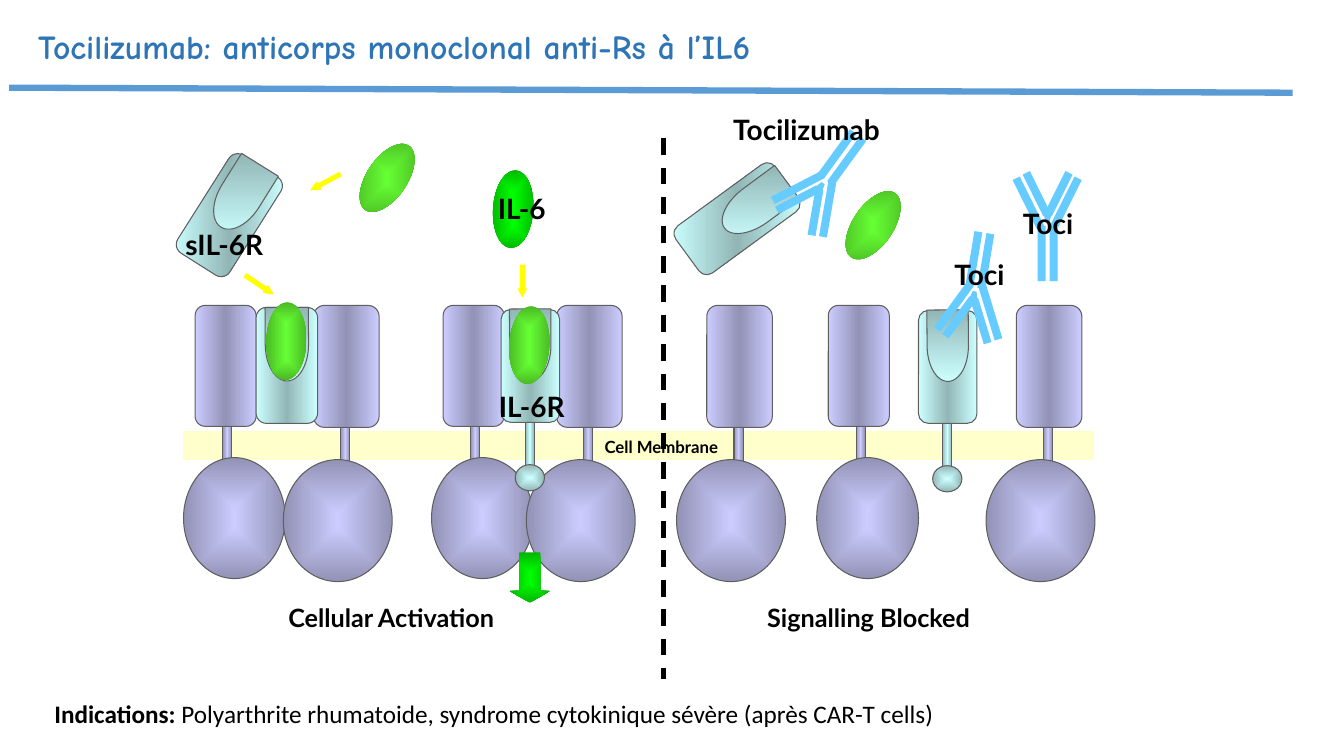
import math
from dataclasses import dataclass

import lxml.etree
import pptx
import pptx.dml.fill
import pptx.enum.dml
import pptx.enum.shapes
import pptx.enum.text
import pptx.oxml.ns
import pptx.util
from pptx.dml.color import RGBColor

COLUMNS, ROWS = 133.3, 75
CELL = 0.1  # inches per column and per row

COLOURS = {
    "white": "FFFFFF", "black": "000000", "title": "2E75B6", "rule": "5B9BD5",
    "membrane": "FFFFCC", "edge": "5F5F5F", "yellow": "FFFF00", "antibody": "66CCFF",
    "lilac": "CCCCFF", "dark lilac": "9292B6", "aqua": "CCFFFF", "dark aqua": "92B6B6",
    "lime": "66FF33", "dark lime": "49B624", "green": "00FF00", "dark green": "00B600",
}
KIND = pptx.enum.shapes.MSO_SHAPE
ALIGN = pptx.enum.text.PP_ALIGN


@dataclass(frozen=True)
class Paint:
    """One colour is a solid fill; more colours are evenly spaced gradient stops."""
    stops: tuple[str, ...]
    spread: str = "across"
    edge: str | None = None


@dataclass(frozen=True)
class Part:
    kind: KIND
    col: float
    row: float
    cols: float
    rows: float
    paint: Paint
    turn: float = 0
    adjust: tuple[float, ...] = ()


@dataclass(frozen=True)
class Label:
    words: str
    col: float
    row: float
    cols: float
    rows: float
    size: float = 20


@dataclass(frozen=True)
class Gp130Form:
    """Sizes of one gp130 chain; offsets count from the left of its body."""
    head: tuple[float, float, float, float]
    stem: tuple[float, float, float, float]
    body: tuple[float, float, float, float]


def tube(light: str, edge: str = "edge") -> Paint:
    return Paint((light, f"dark {light}", light), edge=edge)


def rod(light: str) -> Paint:
    return Paint((f"dark {light}", light, f"dark {light}"), edge="edge")


def ball(light: str, edge: str | None = None, spread: str = "shape") -> Paint:
    return Paint((light, f"dark {light}"), spread, edge)


CUP = Paint(("dark aqua", "aqua"), "down", "edge")
ARROW = Paint(("yellow",), edge="yellow")
ANTIBODY = Paint(("antibody",))
ROUND = (0.167,)

NARROW = Gp130Form((1.15, 30.3, 6.05, 12), (3.9, 41.4, 0.9, 5.5), (0, 45.4, 10.1, 12))
WIDE = Gp130Form((3, 30.3, 6.5, 12.1), (5.7, 41.6, 0.9, 5.6), (0, 45.6, 10.8, 12.1))

# Centre offset from the joint, length and turn of each antibody bar
ANTIBODY_BARS = (
    (-0.6, 3.55, 5.5, 0), (0.6, 3.55, 5.5, 0),
    (1.8, -1.45, 5.5, 26.6), (-1.9, -1.45, 5.5, 153.7),
    (-1.1, -2.4, 4.6, 153.7), (1.1, -2.4, 4.6, 206.6),
)
ANTIBODY_JOINT = ((-0.4, -0.4), (-0.2, 0.4), (0.2, 0.4), (0.4, -0.4))


def cells(count: float) -> int:
    return pptx.util.Inches(count * CELL)


def colour(name: str) -> RGBColor:
    return RGBColor.from_string(COLOURS[name])


def add_gradient(shape, paint: Paint) -> None:
    """Fill with a gradient that keeps its direction when the shape turns."""
    tag = pptx.oxml.ns.qn
    shape.fill.gradient()
    gradient = shape._element.spPr.find(tag("a:gradFill"))
    for child in list(gradient):
        gradient.remove(child)
    gradient.set("rotWithShape", "0")
    stops = lxml.etree.SubElement(gradient, tag("a:gsLst"))
    for index, name in enumerate(paint.stops):
        position = round(100000 * index / (len(paint.stops) - 1))
        stop = lxml.etree.SubElement(stops, tag("a:gs"), pos=str(position))
        lxml.etree.SubElement(stop, tag("a:srgbClr"), val=COLOURS[name])
    if paint.spread in ("across", "down"):
        angle = "0" if paint.spread == "across" else "5400000"
        lxml.etree.SubElement(gradient, tag("a:lin"), ang=angle, scaled="1")
    else:
        centre = lxml.etree.SubElement(gradient, tag("a:path"), path=paint.spread)
        lxml.etree.SubElement(centre, tag("a:fillToRect"),
                              l="50000", t="50000", r="50000", b="50000")


def apply_paint(shape, paint: Paint) -> None:
    shape.shadow.inherit = False
    if len(paint.stops) == 1:
        shape.fill.solid()
        shape.fill.fore_color.rgb = colour(paint.stops[0])
    else:
        add_gradient(shape, paint)
    if paint.edge:
        shape.line.color.rgb = colour(paint.edge)
        shape.line.width = pptx.util.Pt(0.75)
    else:
        shape.line.fill.background()


def draw(slide, part: Part):
    shape = slide.shapes.add_shape(
        part.kind, cells(part.col), cells(part.row), cells(part.cols), cells(part.rows))
    shape.rotation = part.turn
    for index, value in enumerate(part.adjust):
        shape.adjustments[index] = value
    apply_paint(shape, part.paint)
    return shape


def draw_line(slide, start: tuple, end: tuple, name: str, width: float, dashed=False) -> None:
    line = slide.shapes.add_connector(
        pptx.enum.shapes.MSO_CONNECTOR.STRAIGHT, *map(cells, start + end))
    line.line.color.rgb = colour(name)
    line.line.width = pptx.util.Pt(width)
    if dashed:
        line.line.dash_style = pptx.enum.dml.MSO_LINE.DASH
    lxml.etree.SubElement(line._element.spPr, pptx.oxml.ns.qn("a:effectLst"))


def add_run(paragraph, words: str, size: float, font: str, name="black", bold=True) -> None:
    run = paragraph.add_run()
    run.text = words
    run.font.size = pptx.util.Pt(size)
    run.font.name = font
    run.font.bold = bold
    run.font.color.rgb = colour(name)


def add_text_area(slide, col: float, row: float, cols: float, rows: float):
    area = slide.shapes.add_textbox(cells(col), cells(row), cells(cols), cells(rows))
    area.text_frame.word_wrap = True
    area.text_frame.auto_size = pptx.enum.text.MSO_AUTO_SIZE.SHAPE_TO_FIT_TEXT
    return area.text_frame.paragraphs[0]


def draw_label(slide, label: Label) -> None:
    paragraph = add_text_area(slide, label.col, label.row, label.cols, label.rows)
    paragraph.alignment = ALIGN.CENTER
    add_run(paragraph, label.words, label.size, "Lato")


def draw_gp130(slide, col: float, form: Gp130Form) -> None:
    for kind, (offset, *rest), paint, adjust in (
            (KIND.RECTANGLE, form.stem, rod("lilac"), ()),
            (KIND.OVAL, form.body, ball("lilac", "edge"), ()),
            (KIND.ROUNDED_RECTANGLE, form.head, tube("lilac"), ROUND)):
        draw(slide, Part(kind, col + offset, *rest, paint, adjust=adjust))


def draw_membrane_receptor(slide, col: float, row: float) -> None:
    draw(slide, Part(KIND.RECTANGLE, col + 2.4, row + 10.4, 0.9, 5.2, rod("aqua")))
    draw(slide, Part(KIND.OVAL, col + 1.4, row + 15.4, 2.9, 2.6, ball("aqua", "edge")))
    draw(slide, Part(KIND.ROUNDED_RECTANGLE, col, row, 5.8, 11.2, tube("aqua"), adjust=ROUND))
    draw(slide, Part(KIND.FLOWCHART_DELAY, col - 0.65, row + 1.45, 7.1, 4.1, CUP, 89.7))


def draw_antibody(slide, col: float, row: float, turn: float) -> None:
    """Draw a Y around its joint, the whole turned clockwise in degrees."""
    cos, sin = math.cos(math.radians(turn)), math.sin(math.radians(turn))

    def place(x: float, y: float) -> tuple[float, float]:
        return col + x * cos - y * sin, row + x * sin + y * cos

    corners = [tuple(map(cells, place(*corner))) for corner in ANTIBODY_JOINT]
    outline = slide.shapes.build_freeform(*corners[0])
    outline.add_line_segments(corners[1:], close=True)
    apply_paint(outline.convert_to_shape(), ANTIBODY)
    for x, y, length, lean in ANTIBODY_BARS:
        middle, centre = place(x, y)
        draw(slide, Part(KIND.RECTANGLE, middle - 0.4, centre - length / 2, 0.8, length,
                         ANTIBODY, (turn + lean) % 360))


def draw_il6(slide, col: float, row: float, turn: float, light: str = "lime") -> None:
    draw(slide, Part(KIND.OVAL, col, row, 4, 7.7, ball(light), turn))


def draw_title(slide) -> None:
    banner = draw(slide, Part(KIND.RECTANGLE, 2.8, -1, 87.8, 10.3, Paint(("white",), edge="white")))
    banner.text_frame.word_wrap = True
    banner.text_frame.vertical_anchor = pptx.enum.text.MSO_ANCHOR.MIDDLE
    paragraph = banner.text_frame.paragraphs[0]
    paragraph.alignment = ALIGN.LEFT
    paragraph.line_spacing = 1.2
    paragraph.space_after = pptx.util.Pt(6)
    add_run(paragraph, "Tocilizumab: anticorps monoclonal anti-Rs à l’IL6", 24, "Comic Neue", "title")


def draw_activation(slide) -> None:
    draw_il6(slide, 36.4, 13.8, 34.2)
    draw_label(slide, Label("Cellular Activation", 17.7, 59.3, 42.2, 4.7, 18))
    draw(slide, Part(KIND.ROUNDED_RECTANGLE, 19.7, 15.6, 6.1, 11.5, tube("aqua"), 32.3, ROUND))
    draw(slide, Part(KIND.FLOWCHART_DELAY, 20.2, 17.3, 7.3, 4.3, CUP, 122))
    draw_label(slide, Label("sIL-6R", 16.2, 22.1, 12.1, 4.1))
    for col, form in ((18.2, NARROW), (28.1, WIDE), (42.8, NARROW), (52.2, WIDE)):
        draw_gp130(slide, col, form)
    draw(slide, Part(KIND.ROUNDED_RECTANGLE, 25.4, 30.5, 6.1, 11.5, tube("aqua"), adjust=ROUND))
    draw(slide, Part(KIND.FLOWCHART_DELAY, 24.8, 32, 7.3, 4.3, CUP, 89.7))
    draw_il6(slide, 26.4, 30, 1.9)
    draw_il6(slide, 48.9, 16.9, 4, "green")
    draw_label(slide, Label("IL-6", 47.2, 18.5, 9.1, 4.5))
    for col, row, rows, turn, tip in ((51.4, 26.3, 3.1, 180, 0.92), (31.9, 16.4, 3.3, 241.9, 1.08),
                                      (25.3, 26.6, 3.3, 123.8, 1.08)):
        draw(slide, Part(KIND.UP_ARROW, col, row, 0.8, rows, ARROW, turn, (0.5, tip)))
    draw_membrane_receptor(slide, 49.7, 30.7)
    draw_il6(slide, 50.5, 30.4, 3.6)
    draw_label(slide, Label("IL-6R", 48.2, 38.1, 9.1, 4.1))


def draw_blockade(slide) -> None:
    draw_membrane_receptor(slide, 91.1, 30.8)
    for col, form in ((97.8, WIDE), (81, NARROW), (67.1, WIDE)):
        draw_gp130(slide, col, form)
    draw_il6(slide, 84.6, 18.5, 34.2)
    draw_antibody(slide, 103.9, 21.6, 0)
    draw_label(slide, Label("Toci", 99.4, 20, 9.1, 4.5))
    draw_label(slide, Label("Signalling Blocked", 64.6, 59.3, 43.1, 4.7, 18))
    draw_antibody(slide, 96.6, 29.3, 189.4)
    draw_label(slide, Label("Toci", 92.6, 25.1, 9.1, 4.5))
    draw_label(slide, Label("Tocilizumab", 70.7, 10.7, 18.6, 4.4))


def main() -> None:
    deck = pptx.Presentation()
    deck.slide_width, deck.slide_height = cells(COLUMNS), cells(ROWS)
    slide = deck.slides.add_slide(deck.slide_layouts[6])
    draw_title(slide)
    draw(slide, Part(KIND.ROUNDED_RECTANGLE, 70.2, 15.6, 5.8, 12.2, tube("aqua"), 53.8, ROUND))
    draw(slide, Part(KIND.FLOWCHART_DELAY, 71.1, 18.3, 7.7, 4.1, CUP, 143.5))
    draw_antibody(slide, 81.4, 18.5, 216)
    draw_line(slide, (18.2, 44.2), (108.5, 44.2), "membrane", 20)
    draw_label(slide, Label("Cell Membrane", 37.3, 42.8, 56.6, 2.8, 12))
    draw_activation(slide)
    draw_blockade(slide)
    draw(slide, Part(KIND.DOWN_ARROW, 50.5, 54.8, 4.1, 5, ball("green", spread="rect"),
                     adjust=(0.5, 0.29)))
    draw_line(slide, (65.8, 13.7), (65.8, 67.4), "black", 3, dashed=True)
    indications = add_text_area(slide, 4.4, 68.8, 96.2, 4)
    add_run(indications, "Indications:", 18, "Calibri")
    add_run(indications, " Polyarthrite rhumatoide, syndrome cytokinique sévère (après CAR-T cells)",
            18, "Calibri", bold=False)
    draw_line(slide, (0.9, 8.7), (128.2, 9.2), "rule", 4.5)
    deck.save("out.pptx")


if __name__ == "__main__":
    main()
